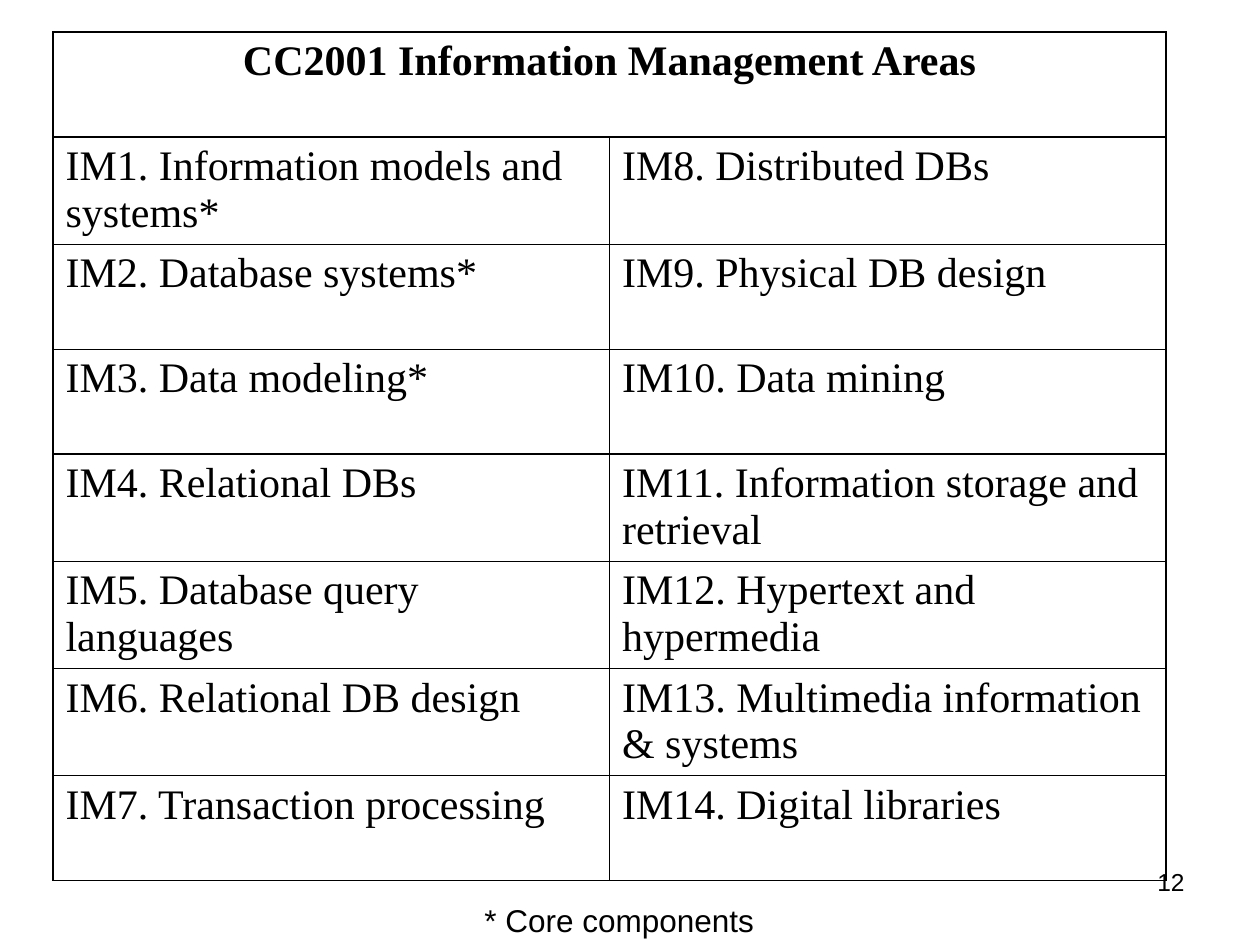
from lxml import etree
from pptx import Presentation
from pptx import util as u
from pptx.dml.color import RGBColor
from pptx.enum import text
from pptx.oxml import ns

BLACK = RGBColor(0, 0, 0)
SCALE = 914400 / 126  # EMU per px

TITLE = "CC2001 Information Management Areas"
AREAS = [
    ("IM1. Information models and systems*", "IM8. Distributed DBs"),
    ("IM2. Database systems*", "IM9. Physical DB design"),
    ("IM3. Data modeling*", "IM10. Data mining"),
    ("IM4. Relational DBs", "IM11. Information storage and retrieval"),
    ("IM5. Database query languages", "IM12. Hypertext and hypermedia"),
    ("IM6. Relational DB design", "IM13. Multimedia information & systems"),
    ("IM7. Transaction processing", "IM14. Digital libraries"),
]
ROW_HEIGHTS = [105, 107, 105, 105, 107, 107, 107, 105]

CELL = {"name": "Times New Roman", "size": u.Pt(24), "bold": False}
HEADING = {**CELL, "bold": True}
NUMBER = {"name": "Arial", "size": u.Pt(14)}
NOTE = {"name": "Arial", "size": u.Pt(18)}


def px(n):
    return round(n * SCALE)


def write(tf, content, style, align=text.PP_ALIGN.LEFT):
    p = tf.paragraphs[0]
    p.alignment = align
    r = p.add_run()
    r.text = content
    for key, value in style.items():
        setattr(r.font, key, value)
    r.font.color.rgb = BLACK


def set_borders(cell, widths):
    """Draw the cell's sides; widths maps L, R, T, B to points."""
    tc_pr = cell._tc.get_or_add_tcPr()
    for i, side in enumerate("LRTB"):
        ln = etree.Element(ns.qn(f"a:ln{side}"), w=str(u.Pt(widths[side])))
        fill = etree.SubElement(ln, ns.qn("a:solidFill"))
        etree.SubElement(fill, ns.qn("a:srgbClr"), val=str(BLACK))
        tc_pr.insert(i, ln)


def areas_table(s, x, y, w):
    rows = [(TITLE, "")] + AREAS
    last = len(rows) - 1
    frame = s.shapes.add_table(len(rows), 2, px(x), px(y), px(w), px(sum(ROW_HEIGHTS)))
    table = frame.table
    table.first_row = table.horz_banding = False
    for col in table.columns:
        col.width = px(w / 2)
    table.cell(0, 0).merge(table.cell(0, 1))

    for i, (row, height) in enumerate(zip(rows, ROW_HEIGHTS)):
        table.rows[i].height = px(height)
        for j, content in enumerate(row):
            cell = table.cell(i, j)
            cell.fill.background()
            cell.margin_bottom = 0
            # Outer frame and heading are 1 pt, inner rules 0.75 pt
            outer = {"L": j == 0 or i == 0, "R": j == 1 or i == 0,
                     "T": i <= 1, "B": i in (0, last)}
            set_borders(cell, {k: 1 if v else 0.75 for k, v in outer.items()})
            if i == 0 and j == 0:
                write(cell.text_frame, content, HEADING, text.PP_ALIGN.CENTER)
            elif i > 0:
                cell.margin_right = px(16)
                write(cell.text_frame, content, CELL)


def page_number(s, x, y, w, h):
    tf = s.shapes.add_textbox(px(x), px(y), px(w), px(h)).text_frame
    tf.word_wrap = True
    write(tf, "12", NUMBER, text.PP_ALIGN.RIGHT)


def footnote(s, x, y, w, h):
    tf = s.shapes.add_textbox(px(x), px(y), px(w), px(h)).text_frame
    tf.word_wrap = False
    tf.auto_size = text.MSO_AUTO_SIZE.SHAPE_TO_FIT_TEXT
    tf.vertical_anchor = text.MSO_ANCHOR.MIDDLE
    write(tf, "* Core components", NOTE)


def main():
    prs = Presentation()
    prs.slide_width, prs.slide_height = px(1260), px(945)
    s = prs.slides.add_slide(prs.slide_layouts[6])
    page_number(s, 903, 861, 294, 66)
    areas_table(s, 53, 32, 1113)
    footnote(s, 472, 895, 295, 50)
    prs.save("out.pptx")


if __name__ == "__main__":
    main()
